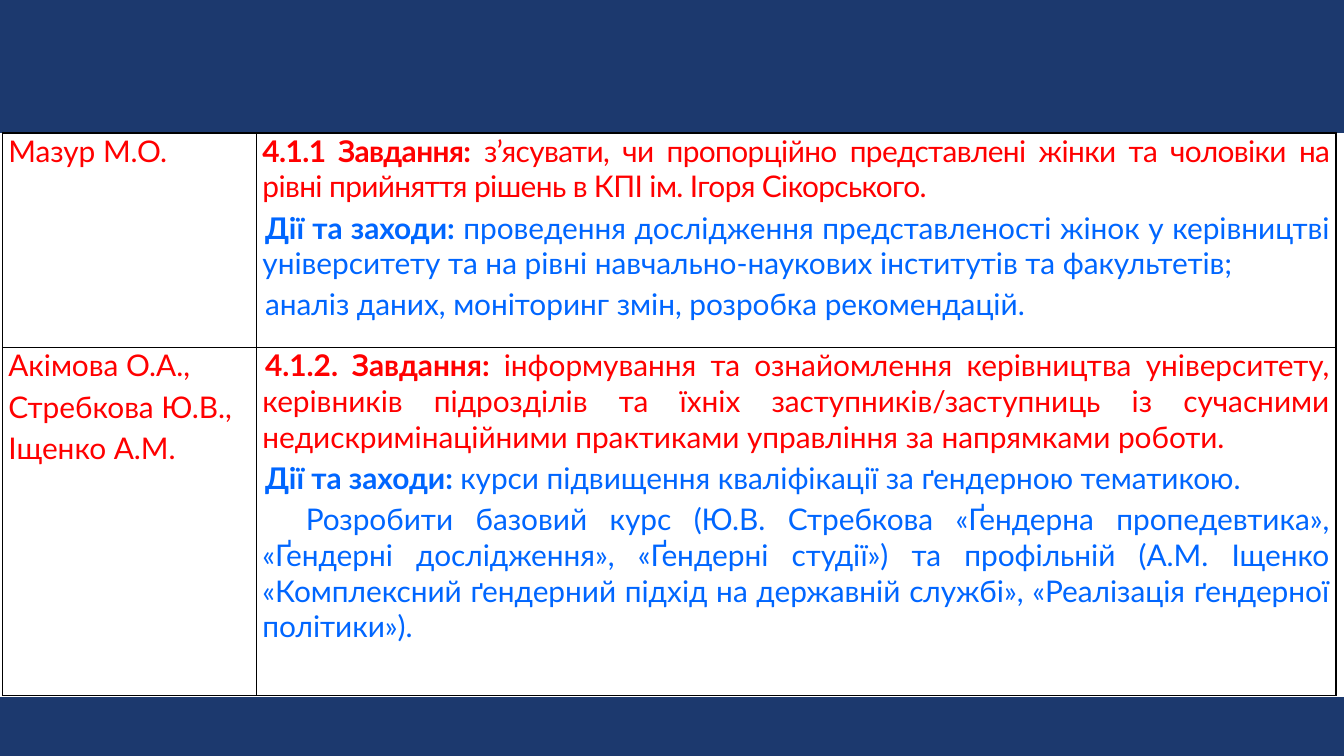
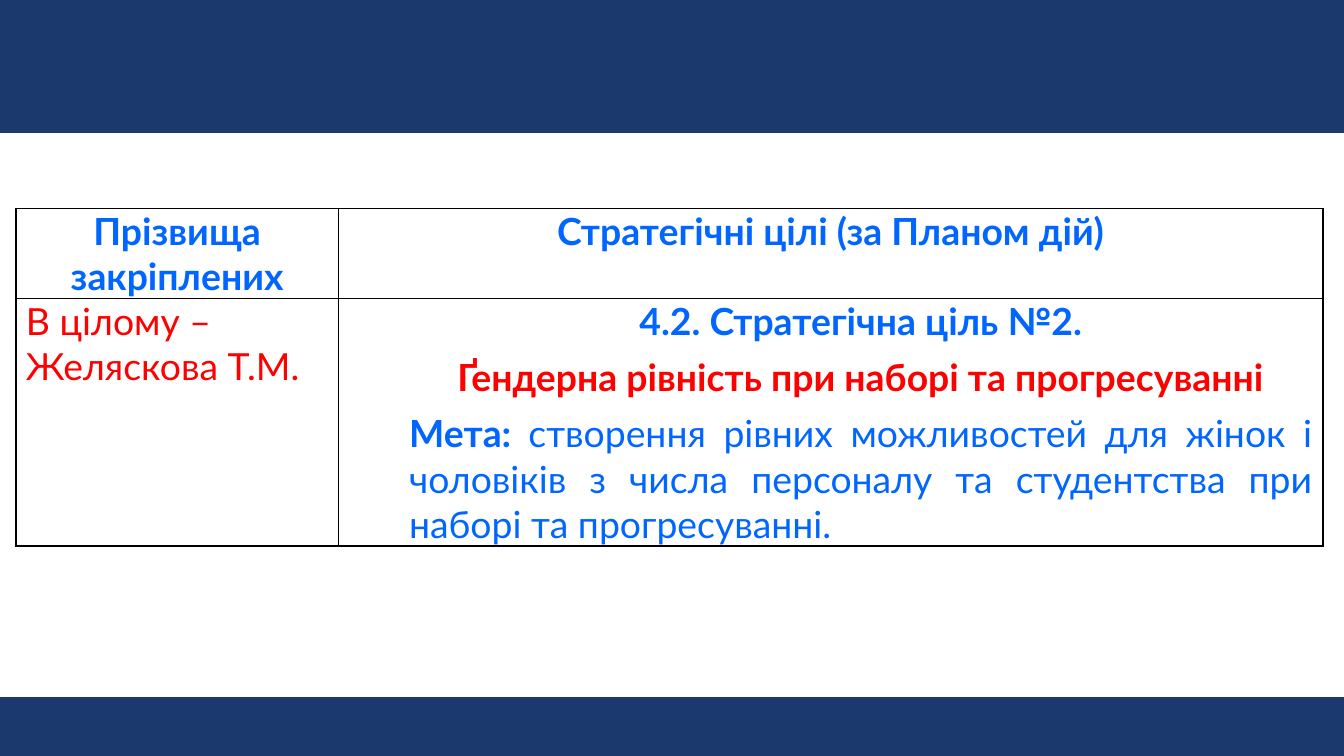
import lxml.etree
import pptx
import pptx.dml.color
import pptx.enum.shapes
import pptx.enum.text
import pptx.oxml.ns
import pptx.util

Cm = pptx.util.Cm
Pt = pptx.util.Pt
ALIGN = pptx.enum.text.PP_ALIGN
COLORS = {"band": "1C396E", "task": "FF0000", "action": "0066FF", "border": "000000"}
FONT = "Lato"


def color(name):
    return pptx.dml.color.RGBColor.from_string(COLORS[name])


def item(tone, *parts, align=ALIGN.JUSTIFY, after=3, left=0, first=0):
    """Describe a paragraph; each part is (text, bold) or (text, bold, tracking)."""
    return {"tone": tone, "parts": parts, "align": align,
            "after": after, "left": left, "first": first}


def name_item(text, after=3):
    return item("task", (text, False), align=ALIGN.LEFT, after=after)


class PlanDeck:
    def __init__(self):
        self.deck = pptx.Presentation()
        self.deck.slide_width = Cm(25.4)
        self.deck.slide_height = Cm(14.29)
        self.page = None

    def add_page(self):
        self.page = self.deck.slides.add_slide(self.deck.slide_layouts[6])
        self.add_band(-0.03, 2.54)
        self.add_band(13.18, 1.1)

    def add_band(self, top, height):
        band = self.page.shapes.add_shape(
            pptx.enum.shapes.MSO_SHAPE.RECTANGLE,
            Cm(-0.05), Cm(top), Cm(25.45), Cm(height))
        band.shadow.inherit = False
        band.fill.solid()
        band.fill.fore_color.rgb = color("band")
        band.line.color.rgb = color("band")
        band.line.width = Pt(0.75)

    def add_table(self, left, top, widths, heights, rows, size, margin):
        table = self.page.shapes.add_table(
            len(heights), len(widths), Cm(left), Cm(top),
            Cm(sum(widths)), Cm(sum(heights))).table
        table.first_row = False
        table.horz_banding = False
        for column, width in zip(table.columns, widths):
            column.width = Cm(width)
        for row, height, contents in zip(table.rows, heights, rows):
            row.height = Cm(height)
            for cell, items in zip(row.cells, contents):
                self.fill_cell(cell, items, size, margin)

    def fill_cell(self, cell, items, size, margin):
        cell.margin_left = cell.margin_right = Cm(margin)
        cell.margin_top = cell.margin_bottom = 0
        cell.fill.background()
        self.add_borders(cell)
        frame = cell.text_frame
        for index, entry in enumerate(items):
            para = frame.add_paragraph() if index else frame.paragraphs[0]
            self.write_item(para, entry, size)

    def add_borders(self, cell):
        properties = cell._tc.get_or_add_tcPr()
        qn = pptx.oxml.ns.qn
        for position, side in enumerate(("a:lnL", "a:lnR", "a:lnT", "a:lnB")):
            line = lxml.etree.Element(qn(side), w=str(int(Pt(1))))
            fill = lxml.etree.SubElement(line, qn("a:solidFill"))
            lxml.etree.SubElement(fill, qn("a:srgbClr"), val=COLORS["border"])
            properties.insert(position, line)

    def write_item(self, para, entry, size):
        para.alignment = entry["align"]
        para.space_after = Pt(entry["after"])
        properties = para._p.get_or_add_pPr()
        properties.set("marL", str(int(Cm(entry["left"]))))
        properties.set("indent", str(int(Cm(entry["first"]))))
        for text, bold, *tracking in entry["parts"]:
            span = para.add_run()
            span.text = text
            span.font.name = FONT
            span.font.size = Pt(size)
            span.font.bold = bold
            span.font.color.rgb = color(entry["tone"])
            if tracking:
                span._r.get_or_add_rPr().set("spc", str(round(tracking[0] * 100)))


def add_tasks_page(plan):
    plan.add_page()
    tight = -0.3
    nudge = 0.05
    representation = [
        item("task", ("4.1.1 Завдання: ", True, tight),
             ("з’ясувати, чи пропорційно представлені жінки та чоловіки на рівні "
              "прийняття рішень в КПІ ім. Ігоря Сікорського.", False, tight)),
        item("action", ("Дії та заходи: ", True),
             ("проведення дослідження представленості жінок у керівництві університету "
              "та на рівні навчально-наукових інститутів та факультетів;", False),
             first=nudge),
        item("action", ("аналіз даних, моніторинг змін, розробка рекомендацій.", False),
             first=nudge),
    ]
    training = [
        item("task", ("4.1.2. Завдання: ", True),
             ("інформування та ознайомлення керівництва університету, керівників "
              "підрозділів та їхніх заступників/заступниць із сучасними "
              "недискримінаційними практиками управління за напрямками роботи.", False),
             first=nudge),
        item("action", ("Дії та заходи: ", True),
             ("курси підвищення кваліфікації за ґендерною тематикою.", False),
             first=nudge),
        item("action",
             ("Розробити базовий курс (Ю.В. Стребкова «Ґендерна пропедевтика», "
              "«Ґендерні дослідження», «Ґендерні студії») та профільній (А.М. Іщенко "
              "«Комплексний ґендерний підхід на державній службі», «Реалізація "
              "ґендерної політики»).", False), first=0.82),
    ]
    trainers = ["Акімова О.А.,", "Стребкова Ю.В.,", "Іщенко А.М."]
    rows = [[[name_item("Мазур М.О.")], representation],
            [[name_item(name) for name in trainers], training]]
    plan.add_table(0.05, 2.51, [4.8, 20.4], [4.06, 6.58], rows, size=16, margin=0.11)


def add_goal_page(plan):
    plan.add_page()
    headings = [[item("action", (text, True), align=ALIGN.CENTER, after=0)]
                for text in ("Прізвища закріплених", "Стратегічні цілі (за Планом дій)")]
    shared = {"after": 6, "left": 1.14}
    goal = [
        item("action", ("4.2. Стратегічна ціль №2.", True), align=ALIGN.CENTER, **shared),
        item("task", ("Ґендерна рівність при наборі та прогресуванні", True),
             align=ALIGN.CENTER, **shared),
        item("action", ("Мета: ", True),
             ("створення рівних можливостей для жінок і чоловіків з числа персоналу "
              "та студентства при наборі та прогресуванні.", False), **shared),
    ]
    rows = [headings, [[name_item("В цілому – Желяскова Т.М.", after=0)], goal]]
    plan.add_table(0.3, 3.94, [6.1, 18.6], [1.7, 4.65], rows, size=20, margin=0.19)


def main():
    plan = PlanDeck()
    add_tasks_page(plan)
    add_goal_page(plan)
    plan.deck.save("out.pptx")


if __name__ == "__main__":
    main()
